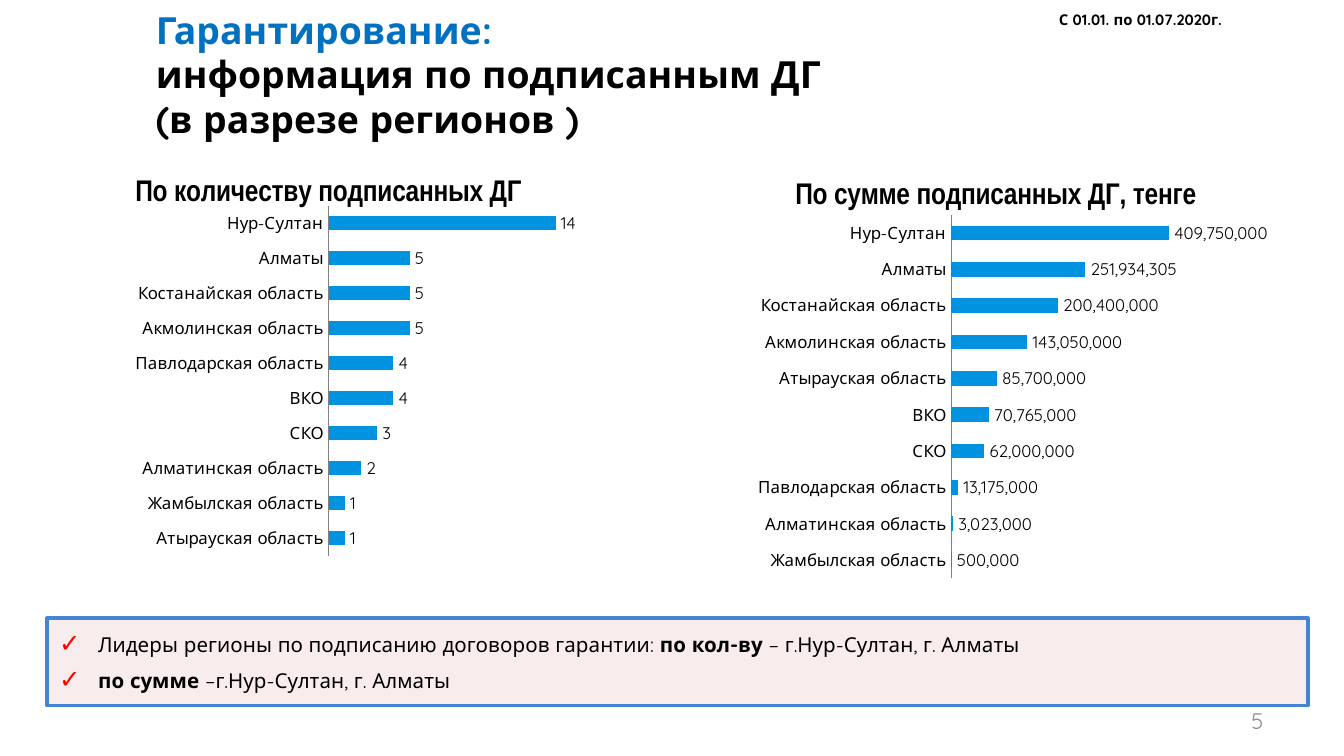
from lxml import etree
from pptx import Presentation
from pptx.chart.data import CategoryChartData
from pptx.dml.color import RGBColor
from pptx.enum import chart as charts, text
from pptx.oxml import ns, parse_xml
from pptx.util import Inches, Pt

BLACK = RGBColor(0x00, 0x00, 0x00)
BLUE = RGBColor(0x00, 0x70, 0xC0)
BAR_BLUE = RGBColor(0x02, 0x93, 0xE0)
BORDER_BLUE = RGBColor(0x45, 0x84, 0xD3)
PINK = RGBColor(0xF2, 0xDC, 0xDB)
RED = RGBColor(0xFF, 0x00, 0x00)
GREY = RGBColor(0x8C, 0x8C, 0x8C)
AXIS_GREY = RGBColor(0x80, 0x80, 0x80)
FONT = "Quicksand"
TITLE_FONT = "Arial Narrow"

COUNTS = [
    ("Атырауская область", 1), ("Жамбылская область", 1),
    ("Алматинская область", 2), ("СКО", 3), ("ВКО", 4),
    ("Павлодарская область", 4), ("Акмолинская область", 5),
    ("Костанайская область", 5), ("Алматы", 5), ("Нур-Султан", 14),
]
SUMS = [
    ("Жамбылская область", 500000), ("Алматинская область", 3023000),
    ("Павлодарская область", 13175000), ("СКО", 62000000),
    ("ВКО", 70765000), ("Атырауская область", 85700000),
    ("Акмолинская область", 143050000), ("Костанайская область", 200400000),
    ("Алматы", 251934305), ("Нур-Султан", 409750000),
]
LEADERS = [
    [("Лидеры регионы по подписанию договоров гарантии: ", False),
     ("по кол-ву ", True), ("– г.Нур-Султан, г. Алматы", False)],
    [("по сумме ", True), ("–г.Нур-Султан, г. Алматы", False)],
]


def style(font, size, color=BLACK, bold=False, name=FONT):
    font.size, font.bold, font.name = Pt(size), bold, name
    font.color.rgb = color


def add_text(para, words, **look):
    span = para.add_run()
    span.text = words
    style(span.font, **look)


def place(shape, box):
    shape.left, shape.top, shape.width, shape.height = map(Inches, box)


def add_label(page, box, words, align=text.PP_ALIGN.LEFT,
              anchor=text.MSO_ANCHOR.TOP, wrap=True, **look):
    frame = page.shapes.add_textbox(*map(Inches, box)).text_frame
    frame.word_wrap, frame.vertical_anchor = wrap, anchor
    frame.paragraphs[0].alignment = align
    add_text(frame.paragraphs[0], words, **look)


def fill_title(page, box):
    title = page.shapes.title
    place(title, box)
    frame = title.text_frame
    frame.auto_size = text.MSO_AUTO_SIZE.NONE
    frame.vertical_anchor = text.MSO_ANCHOR.TOP
    first, last = frame.paragraphs[0], frame.add_paragraph()
    add_text(first, "Гарантирование: ", size=20, color=BLUE, bold=True)
    first.add_line_break()
    add_text(first, "информация по подписанным ДГ", size=20, bold=True)
    add_text(last, "(в разрезе регионов )", size=20, bold=True)
    for para in (first, last):
        para.alignment = text.PP_ALIGN.LEFT


def add_check_bullet(para):
    props = para._p.get_or_add_pPr()
    props.set("marL", str(Inches(0.3)))
    props.set("indent", str(Inches(-0.29)))
    color = etree.SubElement(props, ns.qn("a:buClr"))
    etree.SubElement(color, ns.qn("a:srgbClr"), val=str(RED))
    etree.SubElement(props, ns.qn("a:buSzPct"), val="125000")
    etree.SubElement(props, ns.qn("a:buChar"), char="✓")


def fill_leaders(page, box):
    body = page.placeholders[1]
    place(body, box)
    body.fill.solid()
    body.fill.fore_color.rgb = PINK
    tint = body._element.spPr.find(".//" + ns.qn("a:srgbClr"))
    etree.SubElement(tint, ns.qn("a:alpha"), val="50000")
    body.line.color.rgb = BORDER_BLUE
    body.line.width = Pt(2)
    frame = body.text_frame
    frame.auto_size = text.MSO_AUTO_SIZE.NONE
    frame.vertical_anchor = text.MSO_ANCHOR.MIDDLE
    frame.margin_left = frame.margin_right = Inches(0.08)
    frame.margin_top = frame.margin_bottom = Inches(0.04)
    for index, spans in enumerate(LEADERS):
        para = frame.add_paragraph() if index else frame.paragraphs[0]
        add_check_bullet(para)
        para.space_before, para.space_after = Pt(0), Pt(6)
        for words, bold in spans:
            add_text(para, words, size=11, bold=bold)


def set_plot_box(chart, box):
    """Fix the inner plot area, in fractions of the chart."""
    area = chart._chartSpace.chart.plotArea
    for old in area.findall(ns.qn("c:layout")):
        area.remove(old)
    sides = "".join(f'<c:{side} val="{value}"/>' for side, value in zip("xywh", box))
    area.insert(0, parse_xml(
        f'<c:layout {ns.nsdecls("c")}><c:manualLayout><c:layoutTarget val="inner"/>'
        f'<c:xMode val="edge"/><c:yMode val="edge"/>{sides}'
        '</c:manualLayout></c:layout>'))


def add_region_chart(page, box, title, rows, top_value, plot_box, number_format):
    data = CategoryChartData(number_format=number_format)
    data.categories = [region for region, _ in rows]
    data.add_series("Series 1", [value for _, value in rows])
    chart = page.shapes.add_chart(
        charts.XL_CHART_TYPE.BAR_CLUSTERED, *map(Inches, box), data).chart
    style(chart.font, 10)
    chart.has_legend = False
    chart.has_title = True
    add_text(chart.chart_title.text_frame.paragraphs[0], title,
             size=16, bold=True, name=TITLE_FONT)
    chart.chart_title.include_in_layout = False
    set_plot_box(chart, plot_box)

    regions, values = chart.category_axis, chart.value_axis
    regions.major_tick_mark = charts.XL_TICK_MARK.NONE
    regions.format.line.color.rgb = AXIS_GREY
    style(regions.tick_labels.font, 9)
    values.visible = values.has_major_gridlines = False
    values.minimum_scale, values.maximum_scale = 0, top_value

    plot = chart.plots[0]
    plot.gap_width, plot.vary_by_categories = 150, False
    bars = plot.series[0].format.fill
    bars.solid()
    bars.fore_color.rgb = BAR_BLUE
    labels = plot.series[0].data_labels
    labels.show_value = True
    labels.number_format, labels.number_format_is_linked = number_format, False
    labels.position = charts.XL_LABEL_POSITION.OUTSIDE_END
    style(labels.font, 9)


def main():
    deck = Presentation()
    deck.slide_width = Inches(10)
    deck.slide_height = deck.slide_width * 9 // 16
    page = deck.slides.add_slide(deck.slide_layouts[1])
    fill_title(page, (1.06, 0, 7.01, 0.89))
    fill_leaders(page, (0.35, 4.6, 9.38, 0.65))
    add_label(page, (7.78, 0.03, 1.48, 0.24), "С 01.01. по 01.07.2020г.",
              wrap=False, size=8, bold=True)
    add_label(page, (7.17, 5.21, 2.33, 0.3), "5", align=text.PP_ALIGN.RIGHT,
              anchor=text.MSO_ANCHOR.MIDDLE, size=12, color=GREY)
    add_region_chart(page, (0.2, 1.16, 4.49, 3.1), "По количеству подписанных ДГ",
                     COUNTS, 16, (0.5, 0.12, 0.43, 0.84), "General")
    add_region_chart(page, (5.34, 1.18, 4.14, 3.22), "По сумме подписанных ДГ, тенге",
                     SUMS, 450000000, (0.42, 0.13, 0.43, 0.84), "#,##0")
    deck.save("out.pptx")


if __name__ == "__main__":
    main()
